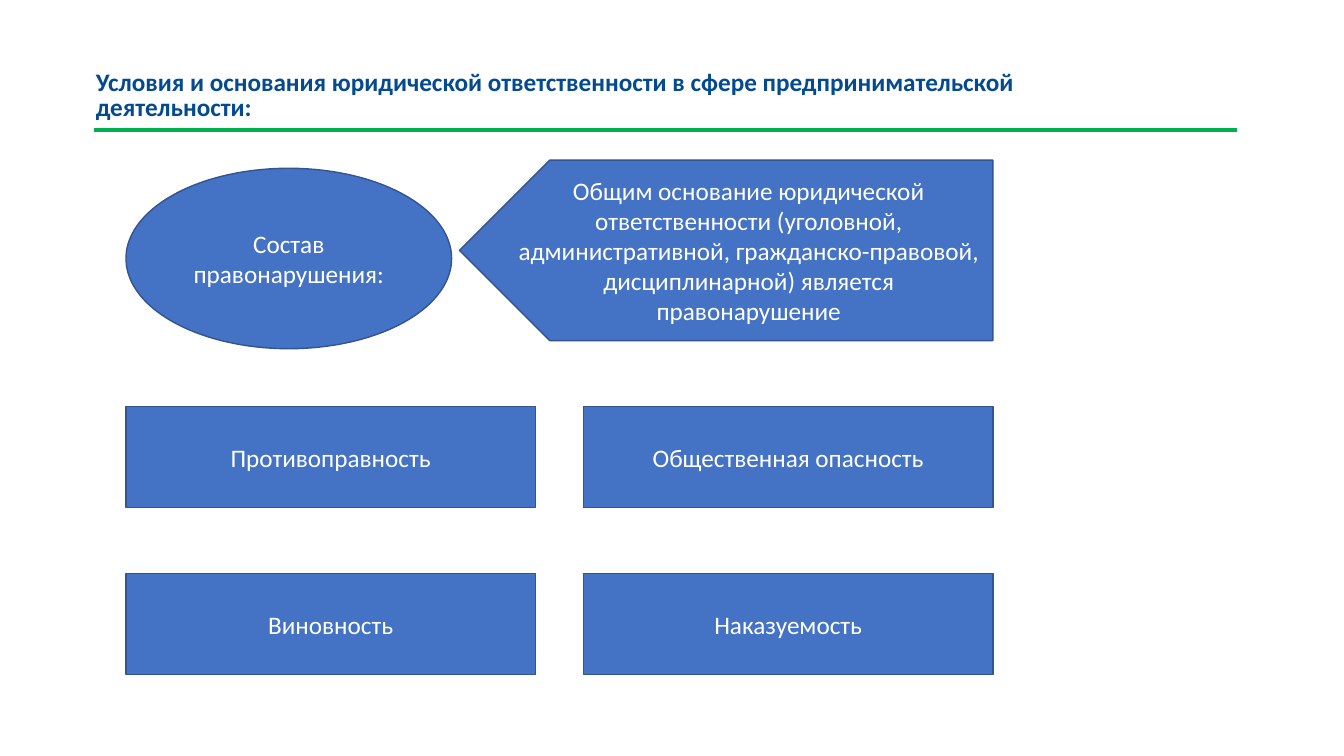
from lxml import etree
from pptx import Presentation
from pptx.dml.color import RGBColor
from pptx.enum.shapes import MSO_CONNECTOR, MSO_SHAPE
from pptx.enum.text import MSO_ANCHOR, MSO_AUTO_SIZE, PP_ALIGN
from pptx.oxml.ns import qn
from pptx.util import Pt

BLUE = RGBColor(0x44, 0x72, 0xC4)
EDGE = RGBColor(0x32, 0x54, 0x91)
NAVY = RGBColor(0x03, 0x4A, 0x90)
GREEN = RGBColor(0x00, 0xB0, 0x50)
WHITE = RGBColor(0xFF, 0xFF, 0xFF)

STRAIGHT = MSO_CONNECTOR.STRAIGHT
OVAL = MSO_SHAPE.OVAL
PLATE = MSO_SHAPE.PENTAGON
RECT = MSO_SHAPE.RECTANGLE
TOP, MIDDLE = MSO_ANCHOR.TOP, MSO_ANCHOR.MIDDLE
LEFT, CENTER = PP_ALIGN.LEFT, PP_ALIGN.CENTER
FIXED = MSO_AUTO_SIZE.NONE

TITLE = ("Условия и основания юридической ответственности "
         "в сфере предпринимательской деятельности:")
CAUSE = ("Общим основание юридической ответственности (уголовной, "
         "административной, гражданско-правовой, дисциплинарной) "
         "является правонарушение")
SIGNS = [["Противоправность", "Общественная опасность"],
         ["Виновность", "Наказуемость"]]


def write(frame, text, color=WHITE, bold=False, align=CENTER,
          anchor=MIDDLE, space=1.0):
    """Put formatted text into a text frame."""
    frame.word_wrap = True
    frame.auto_size = FIXED
    frame.vertical_anchor = anchor
    frame.margin_left = frame.margin_right = Pt(7.2)
    frame.margin_top = frame.margin_bottom = Pt(3.6)
    para = frame.paragraphs[0]
    para.alignment = align
    para.line_spacing = space
    para.space_before = Pt(0)
    run = para.add_run()
    run.text = text
    font = run.font
    font.name, font.size, font.bold = "Calibri", Pt(18), bold
    font.color.rgb = color


def block(slide, kind, text, x, y, w, h):
    """Add a filled shape with centred text."""
    shape = slide.shapes.add_shape(kind, Pt(x), Pt(y), Pt(w), Pt(h))
    shape.shadow.inherit = False
    shape.fill.solid()
    shape.fill.fore_color.rgb = BLUE
    shape.line.color.rgb = EDGE
    shape.line.width = Pt(1)
    write(shape.text_frame, text)
    return shape


def header(slide, x, y, w, h):
    """Place the title and the green rule below it."""
    title = slide.shapes.title
    title.left, title.top = Pt(x), Pt(y)
    title.width, title.height = Pt(w - 138), Pt(h)
    write(title.text_frame, TITLE, color=NAVY, bold=True, align=LEFT,
          anchor=TOP, space=0.8)
    base = Pt(y + h)
    rule = slide.shapes.add_connector(
        STRAIGHT, Pt(x + 5.8), base, Pt(x + w), base)
    rule.line.color.rgb = GREEN
    rule.line.width = Pt(3)
    etree.SubElement(rule.element.spPr, qn("a:effectLst"))


def basis(slide, x, y, w, h):
    """Place the oval and the plate that points to it."""
    drop, part = 5.8, 381
    tall = h - drop
    block(slide, OVAL, "Состав правонарушения:", x, y + drop, 232.6, tall)
    plate = block(slide, PLATE, CAUSE, x + w - part, y, part, tall)
    plate.element.spPr.find(qn("a:xfrm")).set("flipH", "1")


def signs(slide, x, y, w, h):
    """Place the grid of offence signs."""
    wide, tall = 292.4, 72
    for row, names in enumerate(SIGNS):
        for col, name in enumerate(names):
            block(slide, RECT, name, x + col * (w - wide),
                  y + row * (h - tall), wide, tall)


def main():
    """Build and save the slide."""
    deck = Presentation()
    deck.slide_width, deck.slide_height = Pt(960), Pt(540)
    slide = deck.slides.add_slide(deck.slide_layouts[5])
    header(slide, 61.2, 48.2, 822.2, 44.7)
    basis(slide, 90, 114.4, 619.2, 134.7)
    signs(slide, 90, 290.5, 619.2, 191.2)
    deck.save("out.pptx")


if __name__ == "__main__":
    main()
